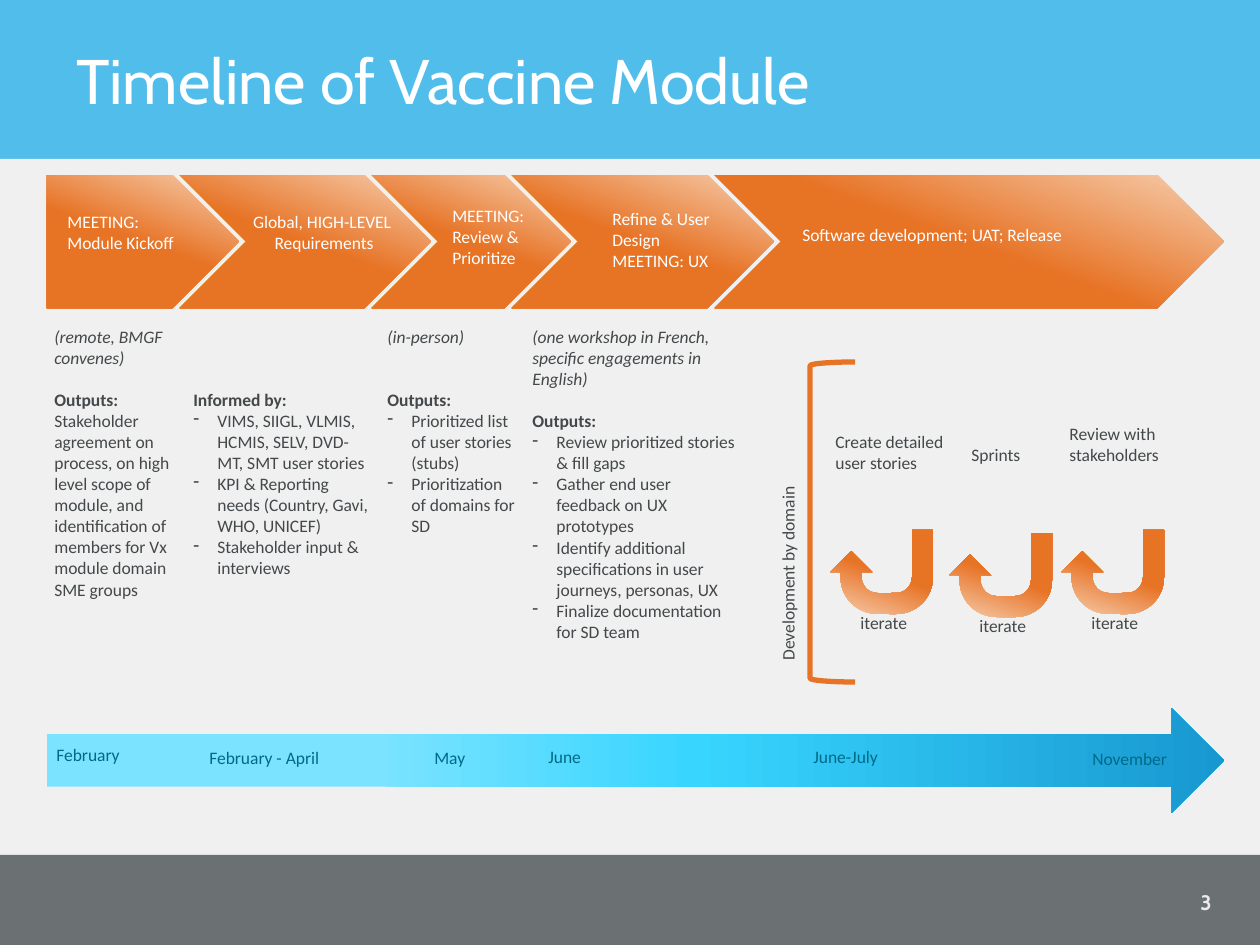
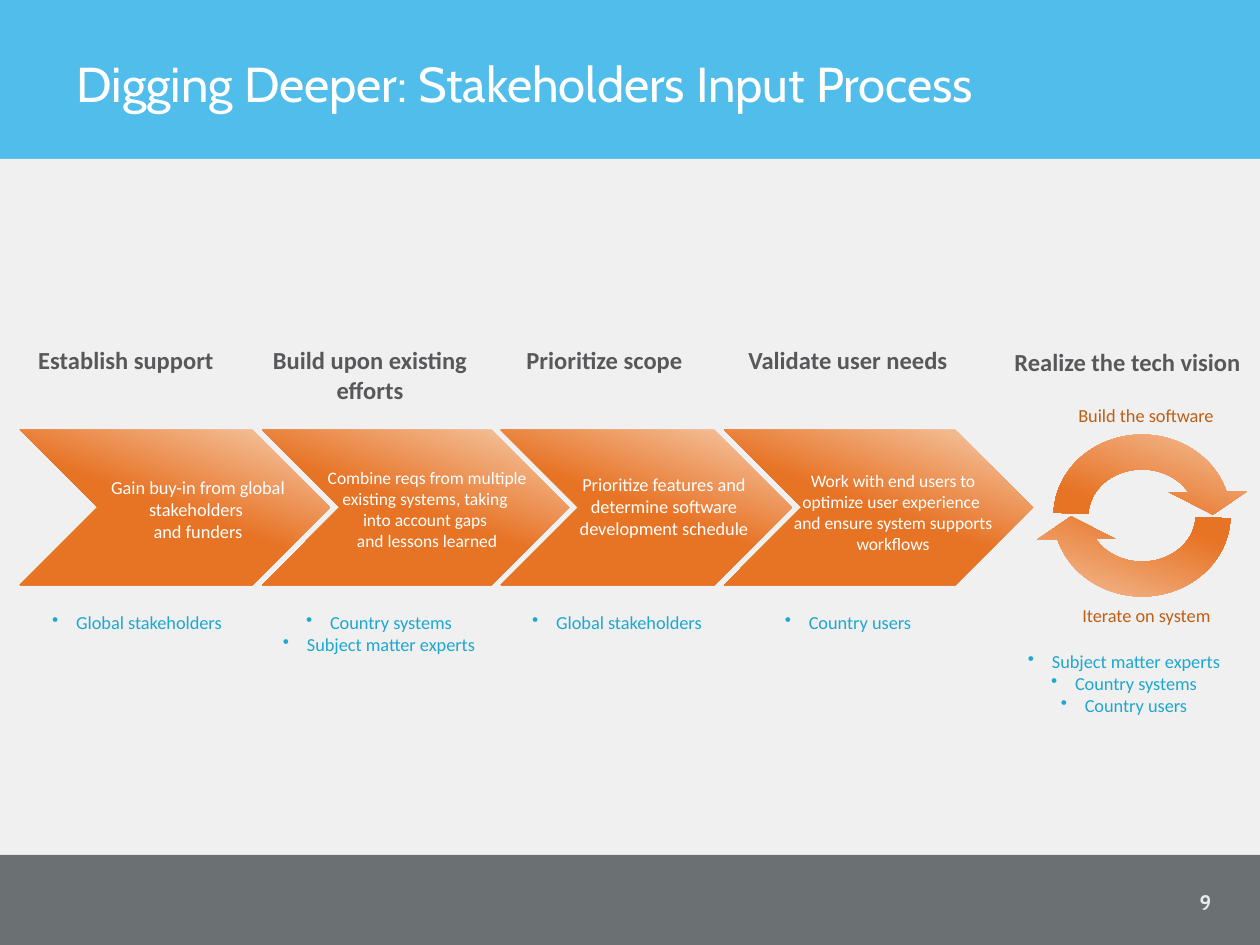
from copy import deepcopy
from dataclasses import dataclass

from lxml.etree import SubElement
from pptx import Presentation
from pptx.dml.color import RGBColor
from pptx.enum.shapes import MSO_SHAPE
from pptx.enum.text import MSO_ANCHOR, MSO_AUTO_SIZE, PP_ALIGN
from pptx.oxml.ns import qn
from pptx.util import Emu, Pt

WHITE, HEADER, BODY, FOOTER = "FFFFFF", "51BDEB", "F0F0F0", "6B7173"
ORANGE, BURNT, TEXT, HEADING = "E77325", "BD5F15", "44484A", "58585A"
MONTH, AUDIENCE, NUMBER = "006A86", "1EA7CF", "EBEBEB"
ORANGE_FADE = [(0, "F6CEAF"), (0.51, ORANGE)]
BLUE_FADE = [(0.28, "7BE3FF"), (0.55, "38D5FF"), (1, "1898D0")]
CIRCLE_ADJ = [0.17, 11.42, 204.18, 109.08, 0.19]
LEFT, CENTER, RIGHT = PP_ALIGN.LEFT, PP_ALIGN.CENTER, PP_ALIGN.RIGHT
INDENT = 24


@dataclass
class Para:
    text: str
    bold: bool = False
    italic: bool = False
    bullet: str = ""
    before: int = 0


def px(n):
    return Emu(round(n * 914400 / 126))


def rgb(value):
    return RGBColor.from_string(value)


def add_run(p, text, size, color, font="Calibri", bold=False, italic=False):
    r = p.add_run()
    r.text = text
    r.font.name, r.font.size = font, Pt(size)
    r.font.bold, r.font.italic = bold, italic
    r.font.color.rgb = rgb(color)


def set_bullet(p, char):
    pPr = p._p.get_or_add_pPr()
    pPr.set("marL", str(px(INDENT)))
    pPr.set("indent", str(-px(INDENT)))
    SubElement(pPr, qn("a:buChar")).set("char", char)


def add_text(s, x, y, w, h, paras, size=10, color=TEXT, align=LEFT):
    sp = s.shapes.add_textbox(px(x), px(y), px(w), px(h))
    tf = sp.text_frame
    tf.word_wrap = True
    tf.auto_size = MSO_AUTO_SIZE.SHAPE_TO_FIT_TEXT
    for i, item in enumerate(paras):
        para = Para(item) if isinstance(item, str) else item
        p = tf.paragraphs[0] if i == 0 else tf.add_paragraph()
        p.alignment = align
        if para.before:
            p.space_before = Pt(para.before)
        if para.bullet:
            set_bullet(p, para.bullet)
        add_run(p, para.text, size, color, bold=para.bold, italic=para.italic)
    return sp


def add_shape(s, kind, x, y, w, h, fill=None):
    sp = s.shapes.add_shape(kind, px(x), px(y), px(w), px(h))
    sp.shadow.inherit = False
    sp.line.fill.background()
    if fill:
        sp.fill.solid()
        sp.fill.fore_color.rgb = rgb(fill)
    else:
        sp.fill.background()
    return sp


def add_faded(s, kind, x, y, w, h, stops=ORANGE_FADE, angle=250):
    sp = add_shape(s, kind, x, y, w, h)
    sp.fill.gradient()
    sp.fill.gradient_angle = angle
    gs_list = sp._element.spPr.find(qn("a:gradFill")).find(qn("a:gsLst"))
    while len(gs_list) < len(stops):
        gs_list.append(deepcopy(gs_list[-1]))
    for stop, (position, color) in zip(sp.fill.gradient_stops, stops):
        stop.position = position
        stop.color.rgb = rgb(color)
    return sp


def add_bands(prs, s):
    tree = prs.slide_master.shapes._spTree
    bands = [(0, 159, HEADER), (159, 696, BODY), (855, 90, FOOTER)]
    for i, (y, h, color) in enumerate(bands):
        sp = add_shape(s, MSO_SHAPE.RECTANGLE, 0, y, 1260, h, color)
        sp._element.nvSpPr.cNvPr.set("id", str(100 + i))
        tree.insert(2 + i, sp._element)


def add_slide(prs, title, size, top, number):
    s = prs.slides.add_slide(prs.slide_layouts[5])
    sp = s.shapes.title
    sp.left, sp.top, sp.width, sp.height = px(64), px(top), px(1120), px(147)
    tf = sp.text_frame
    tf.word_wrap = True
    tf.auto_size = MSO_AUTO_SIZE.NONE
    tf.vertical_anchor = MSO_ANCHOR.MIDDLE
    p = tf.paragraphs[0]
    p.alignment = LEFT
    p.line_spacing = Pt(37.2)
    add_run(p, title, size, WHITE, "Cabin")
    tf = s.shapes.add_textbox(px(1124), px(877), px(100), px(50)).text_frame
    tf.word_wrap = True
    tf.vertical_anchor = MSO_ANCHOR.MIDDLE
    p = tf.paragraphs[0]
    p.alignment = RIGHT
    add_run(p, number, 12, NUMBER, "Cabin", bold=True)
    return s


def chevron_row(s, x, y, h, overlap, widths, first=MSO_SHAPE.CHEVRON):
    for i, w in enumerate(widths):
        add_faded(s, MSO_SHAPE.CHEVRON if i else first, x, y, w, h)
        x += w - overlap


def timeline_phases(s, x, y):
    chevron_row(s, x, y, 133, 59, [192, 251, 199, 262, 509], MSO_SHAPE.PENTAGON)
    labels = [
        (8, 30, 146, 91, LEFT, ["MEETING:", "Module Kickoff"]),
        (160, 30, 234, 66, CENTER, ["Global, HIGH-LEVEL ", "Requirements"]),
        (393, 24, 140, 77, LEFT, ["MEETING:", "Review &", "Prioritize"]),
        (553, 27, 147, 91, LEFT, ["Refine & User", "Design", "MEETING: UX"]),
        (743, 43, 315, 66, LEFT, ["Software development; UAT; Release"]),
    ]
    for dx, dy, w, h, align, paras in labels:
        add_text(s, x + dx, y + dy, w, h, paras, color=WHITE, align=align)


def dashes(*texts):
    return [Para(text, bullet="-") for text in texts]


def phase_details(s, x, y):
    columns = [
        (0, 0, 163, 444, [
            Para("(remote, BMGF convenes)", italic=True),
            Para("Outputs:", bold=True, before=12),
            "Stakeholder agreement on process, on high level scope of module, "
            "and identification of members for Vx module domain SME groups"]),
        (139, 63, 200, 226, [
            Para("Informed by:", bold=True),
            *dashes("VIMS, SIIGL, VLMIS, HCMIS, SELV, DVD-MT, SMT user stories",
                    "KPI & Reporting needs (Country, Gavi, WHO, UNICEF)",
                    "Stakeholder input & interviews")]),
        (333, 0, 155, 267, [
            Para("(in-person)", italic=True),
            Para("Outputs:", bold=True, before=24),
            *dashes("Prioritized list of user stories (stubs)",
                    "Prioritization of domains for SD")]),
        (478, 0, 231, 459, [
            Para("(one workshop in French, specific engagements in English)", italic=True),
            Para("Outputs:", bold=True, before=12),
            *dashes("Review prioritized stories & fill gaps",
                    "Gather end user feedback on UX prototypes",
                    "Identify additional specifications in user journeys, personas, UX",
                    "Finalize documentation for SD team")]),
    ]
    for dx, dy, w, h, paras in columns:
        add_text(s, x + dx, y + dy, w, h, paras)


def development_loops(s, x, y):
    bracket = add_shape(s, MSO_SHAPE.LEFT_BRACKET, x, y, 45, 320)
    bracket.line.color.rgb = rgb(ORANGE)
    bracket.line.width = Pt(3)
    label = add_text(s, x - 201, y + 109, 364, 40, ["Development by domain"])
    label.rotation = 270
    steps = [
        (20, 168, -7, -105, 149, 91, "Create detailed user stories"),
        (139, 171, 10, -95, 130, 40, "Sprints"),
        (251, 168, -4, -113, 158, 66, "Review with stakeholders"),
    ]
    for dx, dy, text_dx, text_dy, w, h, text in steps:
        left, top = x + dx, y + dy
        add_text(s, left + text_dx, top + text_dy, w, h, [text])
        add_faded(s, MSO_SHAPE.U_TURN_ARROW, left, top, 103, 84).rotation = 180
        add_text(s, left + 18, top + 76, 93, 40, ["iterate"])


def month_arrow(s, x, y, w, h):
    add_faded(s, MSO_SHAPE.RIGHT_ARROW, x, y, w, h, BLUE_FADE, 0)
    months = [(-3, 30, "February"), (150, 33, "February - April"), (375, 33, "May"),
              (489, 32, "June"), (754, 32, "June-July"), (1033, 34, "November")]
    for dx, dy, month in months:
        add_text(s, x + dx, y + dy, 165, 40, [month], color=MONTH)


def input_steps(s, x, y):
    chevron_row(s, x, y, 155, 68, [310, 307, 291, 309])
    labels = [
        (61, 40, 79, 10.5, ["Gain buy-in from global stakeholders ", "and funders"]),
        (290, 31, 97, 10, ["Combine reqs from multiple existing systems, taking ",
                           "into account gaps ", "and lessons learned"]),
        (527, 37, 79, 10.5,
         ["Prioritize features and determine software development schedule"]),
        (756, 34, 97, 10, ["Work with end users to optimize user experience ",
                           "and ensure system supports workflows"]),
    ]
    for dx, dy, h, size, paras in labels:
        add_text(s, x + dx, y + dy, 234, h, paras, size, WHITE, CENTER)


def step_headings(s, x, y):
    headings = [
        (0, 0, 234, 43, "Establish support"),
        (230, 0, 262, 72, "Build upon existing efforts"),
        (469, 0, 253, 43, "Prioritize scope"),
        (722, 0, 234, 43, "Validate user needs"),
        (990, 2, 257, 43, "Realize the tech vision"),
    ]
    for dx, dy, w, h, text in headings:
        add_text(s, x + dx, y + dy, w, h, [Para(text, bold=True)], 14, HEADING, CENTER)


def step_audiences(s, x, y):
    audiences = [
        (0, 0, ["Global stakeholders"]),
        (242, 0, ["Country systems", "Subject matter experts"]),
        (480, 0, ["Global stakeholders"]),
        (711, 0, ["Country users"]),
        (987, 39, ["Subject matter experts", "Country systems", "Country users"]),
    ]
    for dx, dy, names in audiences:
        paras = [Para(name, bullet="•") for name in names]
        add_text(s, x + dx, y + dy, 234, 13 + 22 * len(names), paras, 10.5, AUDIENCE, CENTER)


def build_cycle(s, x, y, w, h):
    for rotation in (0, 180):
        sp = add_faded(s, MSO_SHAPE.CIRCULAR_ARROW, x, y, w, h)
        sp.rotation = rotation
        for i, value in enumerate(CIRCLE_ADJ):
            sp.adjustments[i] = value
    for dx, dy, text in [(-3, -15, "Build the software"), (1, 185, "Iterate on system")]:
        add_text(s, x + dx, y + dy, 227 if dx > 0 else 234, 35, [text], 10.5, BURNT, CENTER)


def timeline_slide(prs):
    s = add_slide(prs, "Timeline of Vaccine Module", 36, 11, "3")
    add_bands(prs, s)
    timeline_phases(s, 47, 175)
    phase_details(s, 42, 320)
    development_loops(s, 810, 362)
    month_arrow(s, 47, 708, 1177, 105)


def input_slide(prs):
    s = add_slide(prs, "Digging Deeper: Stakeholders Input Process", 28, 6, "9")
    step_headings(s, 9, 339)
    input_steps(s, 20, 430)
    build_cycle(s, 1032, 413, 220, 205)
    step_audiences(s, 20, 605)


def main():
    prs = Presentation()
    prs.slide_width, prs.slide_height = px(1260), px(945)
    timeline_slide(prs)
    input_slide(prs)
    prs.save("out.pptx")


if __name__ == "__main__":
    main()
